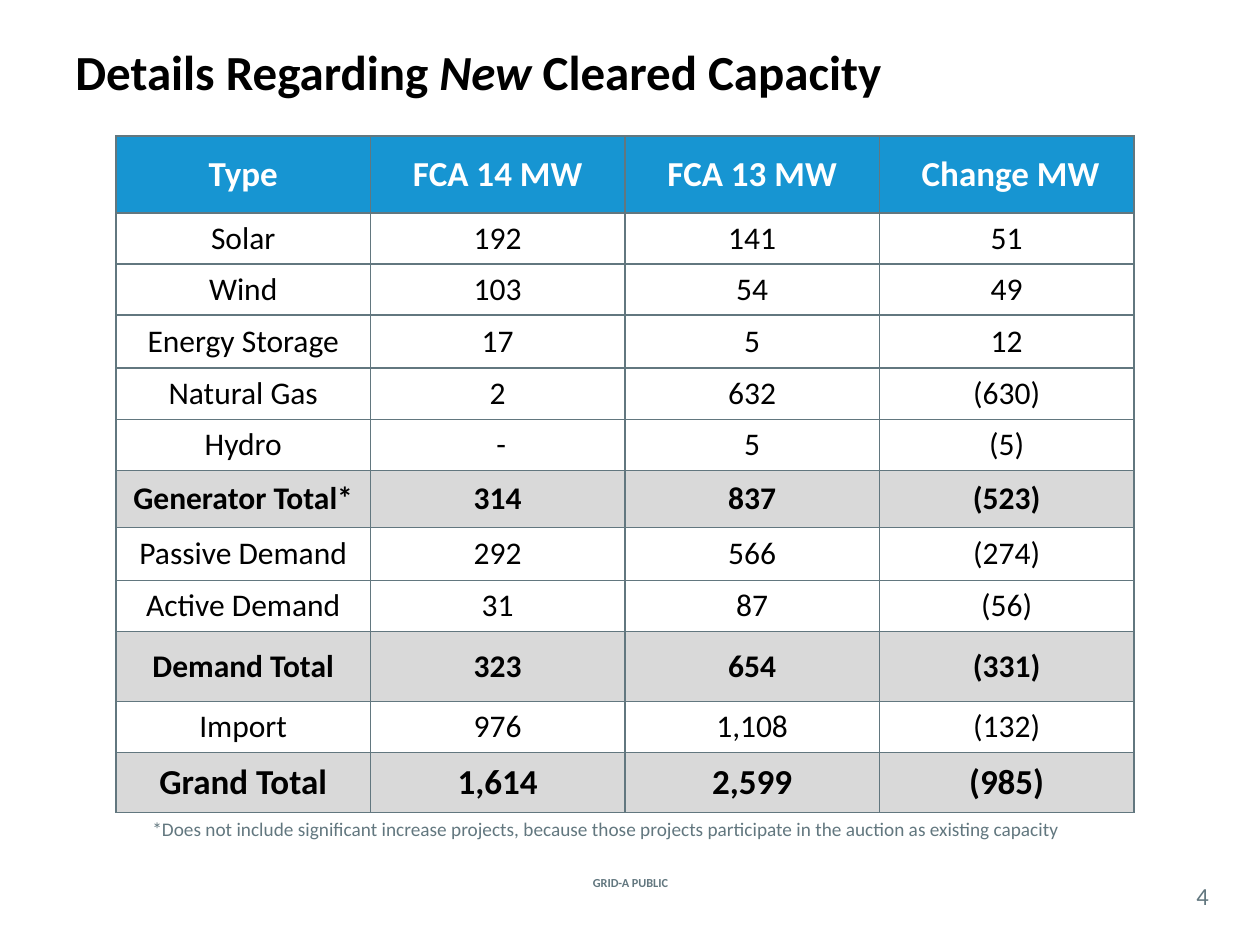
"""Build the slide on new cleared capacity by resource type."""
from dataclasses import dataclass

import lxml.etree
import pptx
import pptx.dml.color
import pptx.enum.text
import pptx.oxml.ns
import pptx.util

EMU_PER_PX = 914400 / 126
ALIGN = pptx.enum.text.PP_ALIGN
ANCHOR = pptx.enum.text.MSO_ANCHOR
AUTO = pptx.enum.text.MSO_AUTO_SIZE


@dataclass(frozen=True)
class Theme:
    font: str = "Calibri"
    black: str = "000000"
    white: str = "FFFFFF"
    slate: str = "62777F"
    blue: str = "1795D2"
    grey: str = "D9D9D9"
    title: int = 28
    large: int = 20
    body: int = 18
    number: int = 14
    note: int = 11
    footer: int = 7
    border: int = 1


T = Theme()


@dataclass(frozen=True)
class Style:
    size: int
    color: str
    bold: bool = False
    fill: str | None = None


HEADER = Style(T.large, T.white, True, T.blue)
BODY = Style(T.body, T.black)
TOTAL = Style(T.body, T.black, True, T.grey)
GRAND = Style(T.large, T.black, True, T.grey)


@dataclass(frozen=True)
class Row:
    height: int
    style: Style
    values: tuple[str, ...]


@dataclass(frozen=True)
class Label:
    box: tuple[int, int, int, int]
    runs: tuple[tuple[str, bool], ...]
    style: Style
    align: ALIGN = ALIGN.LEFT
    frame: tuple[tuple[str, object], ...] = (("vertical_anchor", ANCHOR.MIDDLE),)


TABLE_BOX = (116, 136, 1018, 673)
ROWS = (
    Row(77, HEADER, ("Type", "FCA 14 MW", "FCA 13 MW", " Change MW")),
    Row(49, BODY, ("Solar", "192", "141", "51")),
    Row(49, BODY, ("Wind", "103", "54", "49")),
    Row(53, BODY, ("Energy Storage", "17", "5", "12")),
    Row(49, BODY, ("Natural Gas", "2", "632", "(630)")),
    Row(49, BODY, ("Hydro", " -", "5", "(5)")),
    Row(57, TOTAL, ("Generator Total*", "314", "837", "(523)")),
    Row(53, BODY, ("Passive Demand", "292", "566", "(274)")),
    Row(50, BODY, ("Active Demand", "31", "87", "(56)")),
    Row(70, TOTAL, ("Demand Total", "323", "654", "(331)")),
    Row(46, BODY, ("Import", "976", "1,108", "(132)")),
    Row(60, GRAND, ("Grand Total", "1,614", "2,599", "(985)")),
)
NO_INSETS = tuple((f"margin_{side}", 0) for side in ("left", "top", "right", "bottom"))
LABELS = (
    Label((538, 872, 185, 21), (("GRID-A PUBLIC", False),),
          Style(T.footer, T.slate, True), ALIGN.CENTER),
    Label((63, -8, 1089, 158),
          (("Details Regarding ", False), ("New", True), (" Cleared Capacity", False)),
          Style(T.title, T.black, True)),
    Label((140, 811, 969, 37),
          (("*Does not include significant increase projects, because those projects "
            "participate in the auction as existing capacity", False),),
          Style(T.note, T.slate), frame=(("auto_size", AUTO.SHAPE_TO_FIT_TEXT),)),
    Label((1176, 877, 53, 37), (("4", False),), Style(T.number, T.slate), ALIGN.CENTER,
          (("vertical_anchor", ANCHOR.MIDDLE), *NO_INSETS)),
)


def px(n: float) -> int:
    """Turn pixels into EMU."""
    return round(n * EMU_PER_PX)


def rgb(color: str) -> pptx.dml.color.RGBColor:
    """Turn a hex string into a colour."""
    return pptx.dml.color.RGBColor.from_string(color)


def add_run(p, text: str, style: Style, italic: bool = False) -> None:
    """Add one formatted run to a paragraph."""
    r = p.add_run()
    r.text = text
    formats = {"name": T.font, "size": pptx.util.Pt(style.size),
               "bold": style.bold, "italic": italic}
    for name, value in formats.items():
        setattr(r.font, name, value)
    r.font.color.rgb = rgb(style.color)


def add_label(s, label: Label) -> None:
    """Draw one text box."""
    tf = s.shapes.add_textbox(*map(px, label.box)).text_frame
    for name, value in {"word_wrap": True, **dict(label.frame)}.items():
        setattr(tf, name, value)
    p = tf.paragraphs[0]
    p.alignment = label.align
    for text, italic in label.runs:
        add_run(p, text, label.style, italic)


def add_borders(cell) -> None:
    """Draw a solid line on the four sides of a cell."""
    qn = pptx.oxml.ns.qn
    tc_pr = cell._tc.get_or_add_tcPr()
    for i, side in enumerate("LRTB"):
        ln = lxml.etree.Element(qn(f"a:ln{side}"), w=str(pptx.util.Pt(T.border)))
        fill = lxml.etree.SubElement(ln, qn("a:solidFill"))
        lxml.etree.SubElement(fill, qn("a:srgbClr"), val=T.slate)
        tc_pr.insert(i, ln)


def fill_cell(cell, text: str, style: Style) -> None:
    """Write and format one table cell."""
    cell.vertical_anchor = ANCHOR.MIDDLE
    if style.fill:
        cell.fill.solid()
        cell.fill.fore_color.rgb = rgb(style.fill)
    else:
        cell.fill.background()
    p = cell.text_frame.paragraphs[0]
    p.alignment = ALIGN.CENTER
    add_run(p, text, style)
    add_borders(cell)


def add_capacity_table(s, rows: tuple[Row, ...]) -> None:
    """Draw the table with equal columns."""
    sp = s.shapes.add_table(len(rows), len(rows[0].values), *map(px, TABLE_BOX))
    table = sp.table
    table.first_row = table.horz_banding = False
    for i, row in enumerate(rows):
        table.rows[i].height = px(row.height)
        for j, text in enumerate(row.values):
            fill_cell(table.cell(i, j), text, row.style)
    sp.height = px(TABLE_BOX[3])


def main() -> None:
    """Build and save the slide."""
    prs = pptx.Presentation()
    prs.slide_width, prs.slide_height = px(1260), px(945)
    s = prs.slides.add_slide(prs.slide_layouts[6])
    add_capacity_table(s, ROWS)
    for label in LABELS:
        add_label(s, label)
    prs.save("out.pptx")


if __name__ == "__main__":
    main()
